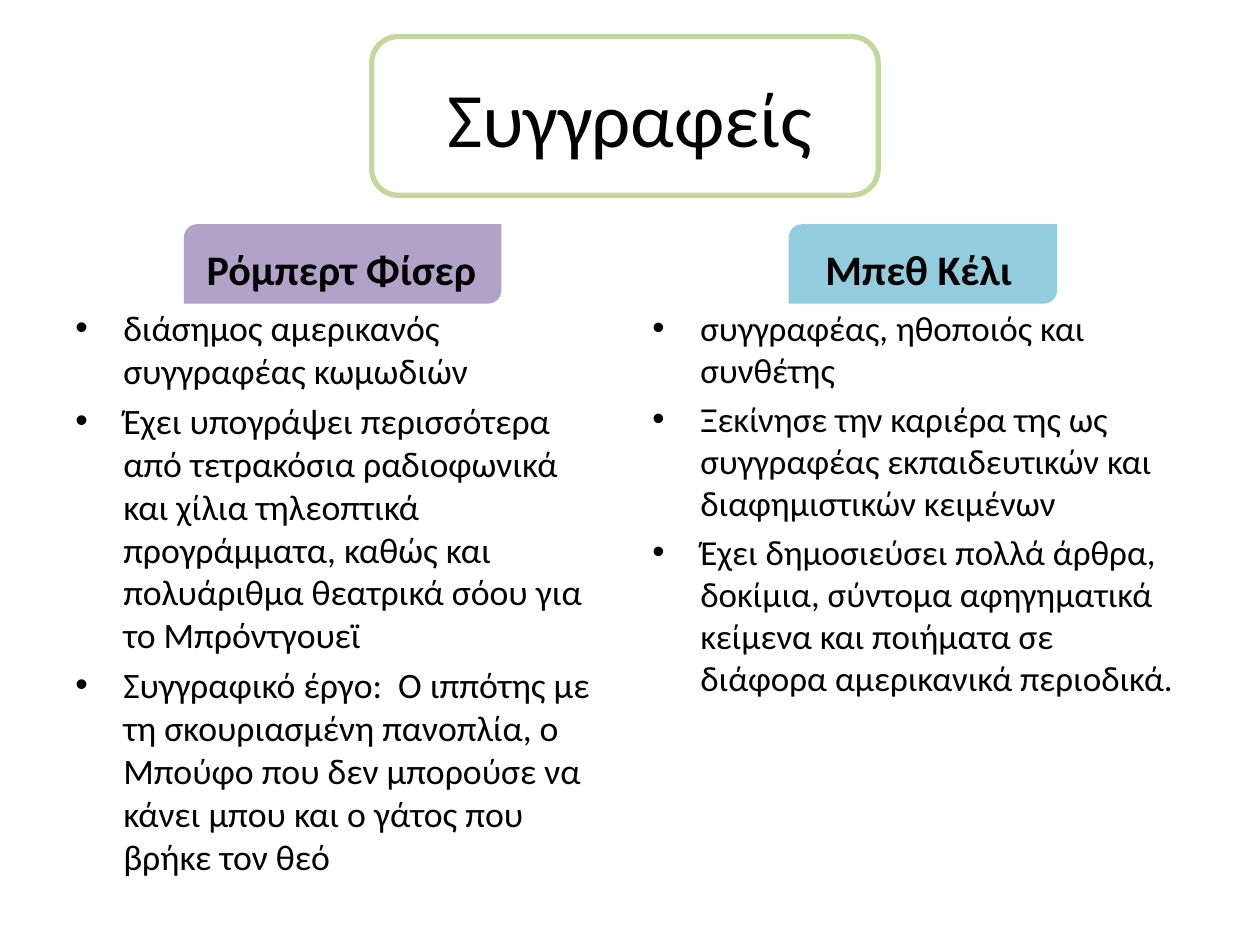
from pptx import Presentation
from pptx.dml.color import RGBColor
from pptx.enum.shapes import MSO_SHAPE
from pptx.enum.text import MSO_ANCHOR, PP_ALIGN
from pptx.oxml.ns import qn
from pptx.util import Inches, Pt
from lxml import etree

TAB_SHAPE = MSO_SHAPE.ROUND_2_DIAG_RECTANGLE
FRAME_SHAPE = MSO_SHAPE.ROUNDED_RECTANGLE
TOP, MIDDLE, BOTTOM = MSO_ANCHOR.TOP, MSO_ANCHOR.MIDDLE, MSO_ANCHOR.BOTTOM
LEFT, CENTER = PP_ALIGN.LEFT, PP_ALIGN.CENTER
FONT = "Calibri"
COLUMN_WIDTH = 4.42
HEADING_HEIGHT = 0.7

AUTHORS = [
    {
        "name": "Ρόμπερτ Φίσερ", "left": 0.5, "size": 20.4,
        "tab": (1.46, 1.78, 2.52, 0.63), "color": "B3A2C7",
        "facts": [
            "διάσημος αμερικανός συγγραφέας κωμωδιών",
            "Έχει υπογράψει περισσότερα από τετρακόσια ραδιοφωνικά και χίλια "
            "τηλεοπτικά προγράμματα, καθώς και πολυάριθμα θεατρικά σόου για "
            "το Μπρόντγουεϊ",
            "Συγγραφικό έργο:  Ο ιππότης με τη σκουριασμένη πανοπλία, ο Μπούφο "
            "που δεν μπορούσε να κάνει μπου και ο γάτος που βρήκε τον θεό",
        ],
    },
    {
        "name": "Μπεθ Κέλι", "left": 5.08, "size": 20,
        "tab": (6.26, 1.78, 2.13, 0.63), "color": "93CDDD",
        "facts": [
            "συγγραφέας, ηθοποιός και συνθέτης",
            "Ξεκίνησε την καριέρα της ως συγγραφέας εκπαιδευτικών και "
            "διαφημιστικών κειμένων",
            "Έχει δημοσιεύσει πολλά άρθρα, δοκίμια, σύντομα αφηγηματικά "
            "κείμενα και ποιήματα σε διάφορα αμερικανικά περιοδικά.",
        ],
    },
]


def rgb(color):
    """Turn a hex string into a colour."""
    return RGBColor.from_string(color)


def add_shape(page, kind, box, fill=None, line=None):
    """Add a flat preset shape with an optional fill and outline."""
    shape = page.shapes.add_shape(kind, *map(Inches, box))
    shape.shadow.inherit = False
    if fill:
        shape.fill.solid()
        shape.fill.fore_color.rgb = rgb(fill)
    else:
        shape.fill.background()
    if line:
        shape.line.color.rgb = rgb(line)
        shape.line.width = Pt(3)
    else:
        shape.line.fill.background()


def add_text(page, box, lines, size, anchor, align, bold=False):
    """Add a wrapped text box with one paragraph per line and return its paragraphs."""
    frame = page.shapes.add_textbox(*map(Inches, box)).text_frame
    frame.word_wrap = True
    frame.vertical_anchor = anchor
    frame.text = "\n".join(lines)
    for para in frame.paragraphs:
        para.alignment = align
        for span in para.runs:
            span.font.name = FONT
            span.font.size = Pt(size)
            span.font.bold = bold
            span.font.color.rgb = rgb("000000")
    return frame.paragraphs


def add_bullet(para):
    """Give a paragraph a round bullet, a hanging indent and space above."""
    para.space_before = Pt(4)
    properties = para._p.get_or_add_pPr()
    properties.set("marL", str(Inches(0.38)))
    properties.set("indent", str(Inches(-0.38)))
    etree.SubElement(properties, qn("a:buFont")).set("typeface", "Arial")
    etree.SubElement(properties, qn("a:buChar")).set("char", "•")


def add_title(page, box):
    """Place the slide title and its rounded frame."""
    add_text(page, box, ["Συγγραφείς"], 44, MIDDLE, CENTER)
    add_shape(page, FRAME_SHAPE, (2.95, 0.29, 4.02, 1.26), line="C3D69B")


def add_author(page, box, author):
    """Place an author's coloured tab, name and facts in a column."""
    left, top, width, height = box
    add_shape(page, TAB_SHAPE, author["tab"], fill=author["color"])
    add_text(page, (left, top, width, HEADING_HEIGHT), [author["name"]],
             24, BOTTOM, CENTER, bold=True)
    facts_box = (left, top + HEADING_HEIGHT, width, height - HEADING_HEIGHT)
    for para in add_text(page, facts_box, author["facts"], author["size"], TOP, LEFT):
        add_bullet(para)


def main():
    """Build the slide and save the deck."""
    deck = Presentation()
    deck.slide_width, deck.slide_height = Inches(10), Inches(7.5)
    page = deck.slides.add_slide(deck.slide_layouts[6])
    for author in AUTHORS:
        add_author(page, (author["left"], 1.68, COLUMN_WIDTH, 5.02), author)
    add_title(page, (0.5, 0.3, 9, 1.25))
    deck.save("out.pptx")


if __name__ == "__main__":
    main()
